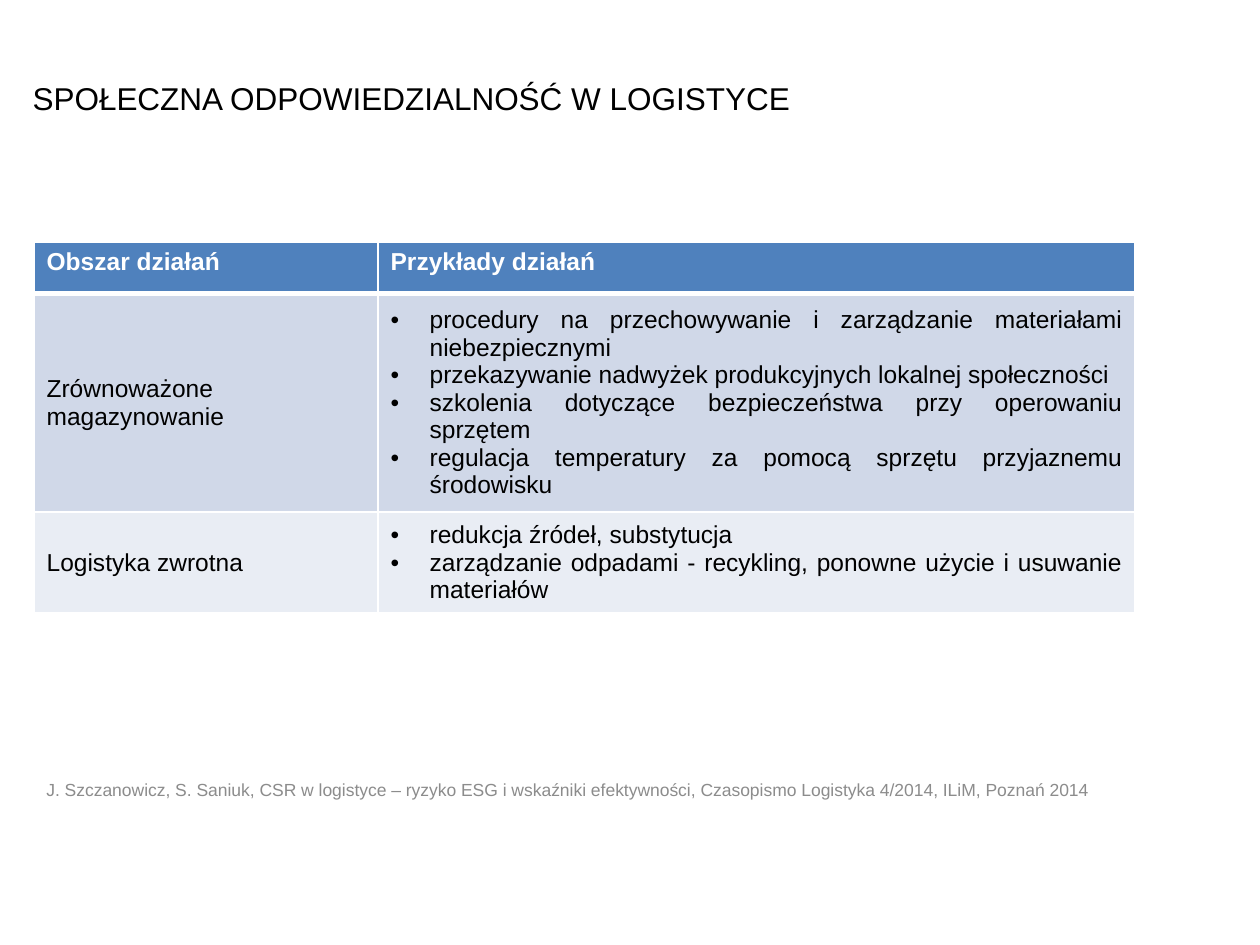
from dataclasses import dataclass

from lxml.etree import SubElement
from pptx import Presentation
from pptx.dml.color import RGBColor
from pptx.enum.text import MSO_ANCHOR, PP_ALIGN
from pptx.oxml.ns import qn
from pptx.util import Inches, Pt


@dataclass(frozen=True)
class Theme:
    font: str = "Arial"
    title_size: int = 18
    table_size: int = 14
    source_size: int = 10
    text: str = "000000"
    source: str = "8C8C8C"
    header_text: str = "FFFFFF"
    header_fill: str = "4F81BD"
    row_fills: tuple = ("D0D8E8", "E9EDF4")
    border: str = "FFFFFF"


THEME = Theme()
LEFT, WIDTH = 0.27, 8.74
COLUMN_WIDTHS = (2.73, 6.01)
ROW_HEIGHTS = (0.41, 1.62, 0.76)
BULLET_INDENT = 0.31
HEADERS = ("Obszar działań", "Przykłady działań")
AREAS = (
    ("Zrównoważone magazynowanie", (
        "procedury na przechowywanie i zarządzanie materiałami niebezpiecznymi",
        "przekazywanie nadwyżek produkcyjnych lokalnej społeczności",
        "szkolenia dotyczące bezpieczeństwa przy operowaniu sprzętem",
        "regulacja temperatury za pomocą sprzętu przyjaznemu środowisku",
    )),
    ("Logistyka zwrotna", (
        "redukcja źródeł, substytucja",
        "zarządzanie odpadami - recykling, ponowne użycie i usuwanie materiałów",
    )),
)


def style_paragraph(p, size, color, bold=False):
    for r in p.runs:
        r.font.name = THEME.font
        r.font.size = Pt(size)
        r.font.bold = bold
        r.font.color.rgb = RGBColor.from_string(color)


def add_text(s, box, text, size, color, anchor):
    tf = s.shapes.add_textbox(*(Inches(v) for v in box)).text_frame
    tf.word_wrap = True
    tf.vertical_anchor = anchor
    tf.text = text
    style_paragraph(tf.paragraphs[0], size, color)


def add_bullet(p):
    pPr = p._p.get_or_add_pPr()
    pPr.set("marL", str(Inches(BULLET_INDENT)))
    pPr.set("indent", str(-Inches(BULLET_INDENT)))
    SubElement(pPr, qn("a:buFont"), typeface=THEME.font)
    SubElement(pPr, qn("a:buChar"), char="•")


def set_borders(cell, top=1, bottom=1):
    tcPr = cell._tc.get_or_add_tcPr()
    for side, width in (("L", 1), ("R", 1), ("T", top), ("B", bottom)):
        ln = SubElement(tcPr, qn(f"a:ln{side}"), w=str(Pt(width)))
        fill = SubElement(ln, qn("a:solidFill"))
        SubElement(fill, qn("a:srgbClr"), val=THEME.border)


def fill_cell(cell, lines, fill, color, bold=False, bullets=False,
              anchor=MSO_ANCHOR.MIDDLE, top=1, bottom=1):
    set_borders(cell, top, bottom)
    cell.fill.solid()
    cell.fill.fore_color.rgb = RGBColor.from_string(fill)
    cell.vertical_anchor = anchor
    tf = cell.text_frame
    tf.text = "\n".join(lines)
    for p in tf.paragraphs:
        p.alignment = PP_ALIGN.JUSTIFY
        if bullets:
            add_bullet(p)
        style_paragraph(p, THEME.table_size, color, bold)


def add_areas_table(s):
    table = s.shapes.add_table(
        len(ROW_HEIGHTS), len(COLUMN_WIDTHS), Inches(LEFT), Inches(1.92),
        Inches(WIDTH), Inches(sum(ROW_HEIGHTS))).table
    for column, width in zip(table.columns, COLUMN_WIDTHS):
        column.width = Inches(width)
    for row, height in zip(table.rows, ROW_HEIGHTS):
        row.height = Inches(height)
    for i, header in enumerate(HEADERS):
        fill_cell(table.cell(0, i), [header], THEME.header_fill,
                  THEME.header_text, bold=True, anchor=MSO_ANCHOR.TOP, bottom=3)
    for i, ((area, examples), fill) in enumerate(zip(AREAS, THEME.row_fills), 1):
        top = 3 if i == 1 else 1
        fill_cell(table.cell(i, 0), [area], fill, THEME.text, top=top)
        fill_cell(table.cell(i, 1), examples, fill, THEME.text,
                  bullets=True, top=top)


def main():
    prs = Presentation()
    prs.slide_width, prs.slide_height = Inches(10), Inches(7.5)
    s = prs.slides.add_slide(prs.slide_layouts[6])
    add_text(s, (0.16, 0.58, 8.12, 0.73),
             "SPOŁECZNA ODPOWIEDZIALNOŚĆ W LOGISTYCE",
             THEME.title_size, THEME.text, MSO_ANCHOR.TOP)
    add_areas_table(s)
    add_text(s, (LEFT, 6.07, WIDTH, 0.4),
             "J. Szczanowicz, S. Saniuk, CSR w logistyce – ryzyko ESG i wskaźniki "
             "efektywności, Czasopismo Logistyka 4/2014, ILiM, Poznań 2014",
             THEME.source_size, THEME.source, MSO_ANCHOR.MIDDLE)
    prs.save("out.pptx")


if __name__ == "__main__":
    main()
